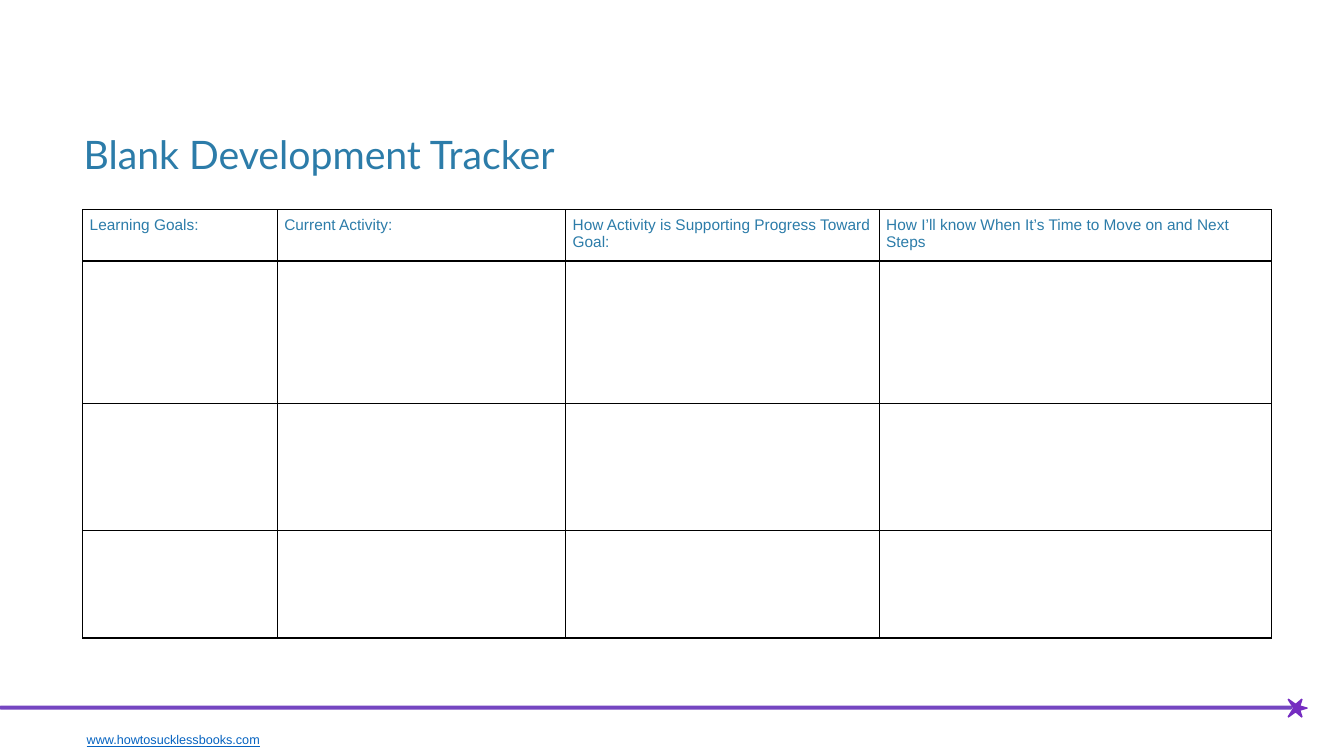
from lxml import etree
from pptx import Presentation
from pptx import util as u
from pptx.dml.color import RGBColor
from pptx.enum import shapes, text
from pptx.oxml.ns import qn

COLORS = {"heading": "2C7CA9", "link": "0563C1", "bar": "7546C1",
          "star": "752CC1", "grid": "000000"}
HEADERS = ["Learning Goals:", "Current Activity:",
           "How Activity is Supporting Progress Toward Goal:",
           "How I’ll know When It’s Time to Move on and Next Steps"]
COL_WIDTHS = [1.93, 2.86, 3.11, 3.89]
ROW_HEIGHTS = [0.51, 1.41, 1.26, 1.07]
# Outline of the star, in inches from its top left corner
STAR = [(0.01, 0.01), (0.08, 0.06), (0.14, 0.01), (0.15, 0.02), (0.13, 0.08),
        (0.2, 0.1), (0.2, 0.11), (0.13, 0.13), (0.15, 0.19), (0.14, 0.2),
        (0.08, 0.15), (0.01, 0.2), (0, 0.19), (0.05, 0.11), (0.05, 0.1),
        (0, 0.02)]


def rgb(name):
    return RGBColor.from_string(COLORS[name])


def style_runs(p, size, font, color, underline=None):
    for r in p.runs:
        r.font.size = u.Pt(size)
        r.font.name = font
        r.font.color.rgb = rgb(color)
        r.font.underline = underline


def paint(sp, color):
    sp.shadow.inherit = False
    sp.fill.solid()
    sp.fill.fore_color.rgb = rgb(color)
    sp.line.fill.background()


def add_title(s, x, y, w, h):
    title = s.shapes.title
    title.left, title.top, title.width, title.height = map(u.Inches, (x, y, w, h))
    tf = title.text_frame
    tf.text = "Blank Development Tracker"
    tf.auto_size = text.MSO_AUTO_SIZE.NONE
    tf.vertical_anchor = text.MSO_ANCHOR.TOP
    tf.paragraphs[0].alignment = text.PP_ALIGN.LEFT
    style_runs(tf.paragraphs[0], 28, "Lato", "heading")


def add_borders(cell):
    tcPr = cell._tc.get_or_add_tcPr()
    for side in ("a:lnL", "a:lnR", "a:lnT", "a:lnB"):
        ln = etree.SubElement(tcPr, qn(side), w=str(u.Pt(1)))
        fill = etree.SubElement(ln, qn("a:solidFill"))
        etree.SubElement(fill, qn("a:srgbClr"), val=COLORS["grid"])


def add_tracker(s, x, y):
    frame = s.shapes.add_table(
        len(ROW_HEIGHTS), len(COL_WIDTHS), u.Inches(x), u.Inches(y),
        u.Inches(sum(COL_WIDTHS)), u.Inches(sum(ROW_HEIGHTS)))
    table = frame.table
    table.first_row = table.horz_banding = False
    for col, width in zip(table.columns, COL_WIDTHS):
        col.width = u.Inches(width)
    for row, height in zip(table.rows, ROW_HEIGHTS):
        row.height = u.Inches(height)
    for cell in table.iter_cells():
        cell.margin_left = cell.margin_right = u.Inches(0.07)
        cell.margin_top = cell.margin_bottom = u.Inches(0.07)
        add_borders(cell)
        cell.fill.background()
    for cell, header in zip(table.rows[0].cells, HEADERS):
        cell.text = header
        style_runs(cell.text_frame.paragraphs[0], 11, "Arial", "heading")


def add_footer(s, x, y, w):
    """Draw the bar with its star at the right end, and the address below."""
    bar = s.shapes.add_shape(shapes.MSO_SHAPE.ROUNDED_RECTANGLE, u.Inches(x),
                             u.Inches(y + 0.08), u.Inches(w - 0.15), u.Inches(0.04))
    bar.adjustments[0] = 0.5
    paint(bar, "bar")

    points = [(u.Inches(x + w - 0.2 + dx), u.Inches(y + dy)) for dx, dy in STAR]
    builder = s.shapes.build_freeform(*points[0])
    builder.add_line_segments(points[1:], close=True)
    paint(builder.convert_to_shape(), "star")

    box = s.shapes.add_textbox(u.Inches(x + 0.85), u.Inches(y + 0.25),
                               u.Inches(2.26), u.Inches(0.19))
    tf = box.text_frame
    tf.word_wrap = True
    tf.margin_left = tf.margin_right = u.Inches(0.02)
    tf.margin_top = tf.margin_bottom = u.Inches(0.02)
    tf.text = "www.howtosucklessbooks.com"
    tf.paragraphs[0].line_spacing = 1.5
    style_runs(tf.paragraphs[0], 9, "Arial", "link", underline=True)


def main():
    prs = Presentation()
    prs.slide_width, prs.slide_height = u.Inches(13.33), u.Inches(7.5)
    s = prs.slides.add_slide(prs.slide_layouts[5])
    add_footer(s, -0.01, 6.92, 12.98)
    add_title(s, 0.73, 1.24, 11.88, 0.57)
    add_tracker(s, 0.82, 2.08)
    prs.save("out.pptx")


if __name__ == "__main__":
    main()
